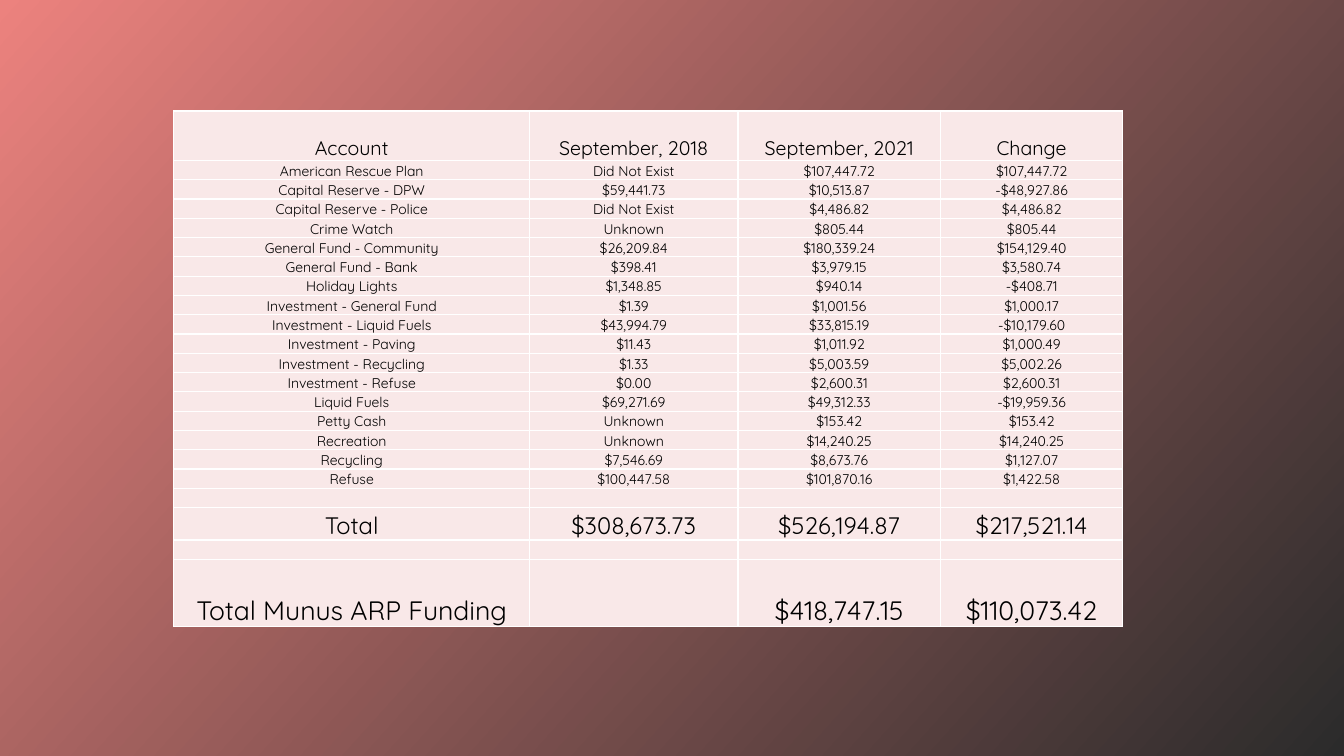
import pptx
import pptx.util
import pptx.dml.color
import pptx.enum.text
import pptx.oxml.ns
from lxml import etree

Pt = pptx.util.Pt
RGB = pptx.dml.color.RGBColor
CORAL = RGB(0xEC, 0x82, 0x7E)
DARK = RGB(0x2B, 0x2B, 0x2B)
BLUSH = RGB(0xF9, 0xE8, 0xE8)
WHITE = RGB(0xFF, 0xFF, 0xFF)
BLACK = RGB(0, 0, 0)
FONT = "Quicksand"

HEAD = ("Account", "September, 2018", "September, 2021", "Change")
FUNDS = [
    ("American Rescue Plan", "Did Not Exist", "$107,447.72", "$107,447.72"),
    ("Capital Reserve - DPW", "$59,441.73", "$10,513.87", "-$48,927.86"),
    ("Capital Reserve - Police", "Did Not Exist", "$4,486.82", "$4,486.82"),
    ("Crime Watch", "Unknown", "$805.44", "$805.44"),
    ("General Fund - Community", "$26,209.84", "$180,339.24", "$154,129.40"),
    ("General Fund - Bank", "$398.41", "$3,979.15", "$3,580.74"),
    ("Holiday Lights", "$1,348.85", "$940.14", "-$408.71"),
    ("Investment - General Fund", "$1.39", "$1,001.56", "$1,000.17"),
    ("Investment - Liquid Fuels", "$43,994.79", "$33,815.19", "-$10,179.60"),
    ("Investment - Paving", "$11.43", "$1,011.92", "$1,000.49"),
    ("Investment - Recycling", "$1.33", "$5,003.59", "$5,002.26"),
    ("Investment - Refuse", "$0.00", "$2,600.31", "$2,600.31"),
    ("Liquid Fuels", "$69,271.69", "$49,312.33", "-$19,959.36"),
    ("Petty Cash", "Unknown", "$153.42", "$153.42"),
    ("Recreation", "Unknown", "$14,240.25", "$14,240.25"),
    ("Recycling", "$7,546.69", "$8,673.76", "$1,127.07"),
    ("Refuse", "$100,447.58", "$101,870.16", "$1,422.58"),
]
TOTAL = ("Total", "$308,673.73", "$526,194.87", "$217,521.14")
NET = ("Total Munus ARP Funding", "", "$418,747.15", "$110,073.42")
BLANK = ("",) * 4
LINE = 13.8

ROWS = (
    [(HEAD, 35.3, 14)]
    + [(fund, LINE, 10) for fund in FUNDS]
    + [(BLANK, LINE, 10), (TOTAL, 23.2, 17), (BLANK, LINE, 10), (NET, 48.2, 19)]
)
SHARES = (3.53, 2.07, 2.01, 1.81)


def add_child(node, tag, **attrs):
    return etree.SubElement(node, pptx.oxml.ns.qn(tag), **attrs)


def draw_edges(cell):
    props = cell._tc.get_or_add_tcPr()
    for side in ("L", "R", "T", "B"):
        edge = add_child(props, "a:ln" + side, w=str(Pt(1)))
        fill = add_child(edge, "a:solidFill")
        add_child(fill, "a:srgbClr", val=str(WHITE))


def fill_cell(cell, text, size):
    draw_edges(cell)
    cell.fill.solid()
    cell.fill.fore_color.rgb = BLUSH
    cell.margin_left = cell.margin_right = cell.margin_top = Pt(0.7)
    cell.margin_bottom = Pt(0)
    cell.vertical_anchor = pptx.enum.text.MSO_ANCHOR.BOTTOM
    para = cell.text_frame.paragraphs[0]
    para.alignment = pptx.enum.text.PP_ALIGN.CENTER
    if not text:
        add_child(para._p, "a:endParaRPr", sz=str(size * 100))
        return
    para.text = text
    font = para.runs[0].font
    font.name = FONT
    font.size = Pt(size)
    font.color.rgb = BLACK


def draw_funds(slide, left, top, width):
    height = sum(row[1] for row in ROWS)
    frame = slide.shapes.add_table(
        len(ROWS), len(SHARES), Pt(left), Pt(top), Pt(width), Pt(height)
    )
    table = frame.table
    table.first_row = False
    table.horz_banding = False
    for col, share in zip(table.columns, SHARES):
        col.width = Pt(width * share / sum(SHARES))
    for row, (texts, tall, size) in zip(table.rows, ROWS):
        row.height = Pt(tall)
        for cell, text in zip(row.cells, texts):
            fill_cell(cell, text, size)


def paint_back(slide):
    fill = slide.background.fill
    fill.gradient()
    fill.gradient_angle = 318
    for stop, color, place in zip(fill.gradient_stops, (CORAL, DARK), (0, 1)):
        stop.color.rgb = color
        stop.position = place


def main():
    deck = pptx.Presentation()
    deck.slide_width = Pt(960)
    deck.slide_height = Pt(540)
    slide = deck.slides.add_slide(deck.slide_layouts[6])
    paint_back(slide)
    draw_funds(slide, 124.2, 79.3, 677.8)
    deck.save("out.pptx")


if __name__ == "__main__":
    main()
